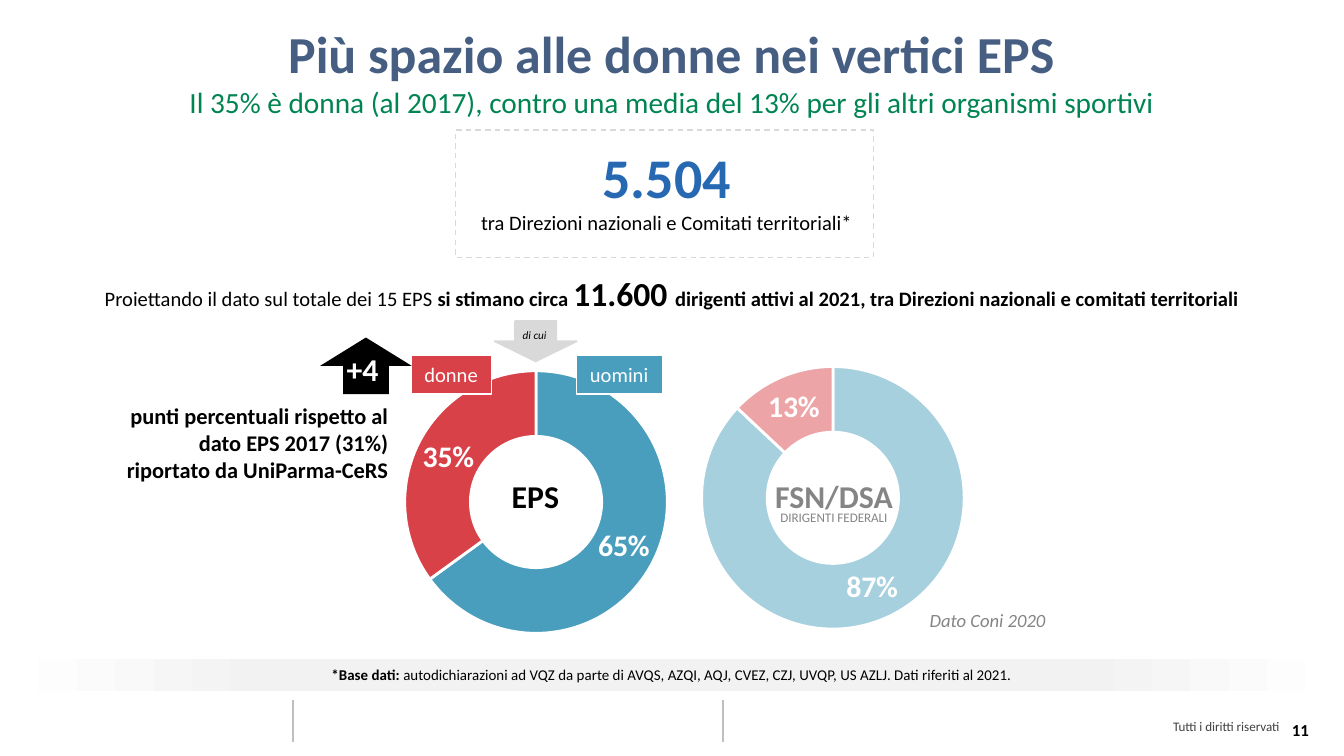
import pptx
import pptx.chart.data
import pptx.dml.color
import pptx.enum.chart
import pptx.enum.dml
import pptx.enum.shapes
import pptx.enum.text
import pptx.oxml
import pptx.oxml.ns
import pptx.util

Cm, Pt = pptx.util.Cm, pptx.util.Pt
SHAPE = pptx.enum.shapes.MSO_SHAPE
ALIGN = pptx.enum.text.PP_ALIGN
ANCHOR = pptx.enum.text.MSO_ANCHOR
AUTO = pptx.enum.text.MSO_AUTO_SIZE
FONT = "Calibri"
COLORS = {
    "black": "000000", "white": "FFFFFF", "dark": "404040", "gray": "D9D9D9",
    "rule": "BFBFBF", "pale": "F2F2F2", "navy": "465E82", "green": "008452",
    "blue": "2668B2", "men": "499EBD", "women": "D94149",
}
NS = pptx.oxml.ns.nsdecls("a")


def rgb(name):
    return pptx.dml.color.RGBColor.from_string(COLORS[name])


def style(font, size, color="black", bold=False, italic=False):
    font.name, font.size = FONT, Pt(size)
    font.bold, font.italic = bold, italic
    font.color.rgb = rgb(color)


def write(shape, *paras, align=ALIGN.LEFT, wrap=True, grow=True,
          anchor=None, pad=(0.25, 0.13), **base):
    """Each paragraph is a string or a list of (text, format) runs."""
    frame = shape.text_frame
    frame.word_wrap = wrap
    frame.auto_size = AUTO.SHAPE_TO_FIT_TEXT if grow else AUTO.NONE
    frame.margin_left = frame.margin_right = Cm(pad[0])
    frame.margin_top = frame.margin_bottom = Cm(pad[1])
    if anchor is not None:
        frame.vertical_anchor = anchor
    for i, runs in enumerate(paras):
        para = frame.add_paragraph() if i else frame.paragraphs[0]
        para.alignment = align
        if isinstance(runs, str):
            runs = [(runs, {})]
        for words, extra in runs:
            run = para.add_run()
            run.text = words
            style(run.font, **{**base, **extra})


def label(slide, spot, *paras, **fmt):
    box = slide.shapes.add_textbox(*map(Cm, spot))
    write(box, *paras, **fmt)


def block(slide, kind, spot, fill=None, line=None, width=0.75):
    shape = slide.shapes.add_shape(kind, *map(Cm, spot))
    shape.shadow.inherit = False
    if fill:
        shape.fill.solid()
        shape.fill.fore_color.rgb = rgb(fill)
    else:
        shape.fill.background()
    if line:
        shape.line.color.rgb = rgb(line)
        shape.line.width = Pt(width)
    else:
        shape.line.fill.background()
    return shape


def rule(slide, x, top, end):
    line = slide.shapes.add_connector(
        pptx.enum.shapes.MSO_CONNECTOR.STRAIGHT, Cm(x), Cm(top), Cm(x), Cm(end))
    line.line.color.rgb = rgb("rule")
    line.line.width = Pt(1)
    line._element.spPr.append(pptx.oxml.parse_xml(f"<a:effectLst {NS}/>"))


def fade(shape, stops):
    """Fill a shape with a left-to-right gradient."""
    marks = "".join(
        f'<a:gs pos="{pos * 1000}"><a:srgbClr val="{COLORS[name]}"/></a:gs>'
        for pos, name in stops)
    grad = pptx.oxml.parse_xml(
        f'<a:gradFill {NS} rotWithShape="1"><a:gsLst>{marks}</a:gsLst>'
        '<a:lin ang="0" scaled="0"/></a:gradFill>')
    props = shape._element.spPr
    props.replace(props.find(pptx.oxml.ns.qn("a:noFill")), grad)


def ring(slide, left, top, men, women):
    data = pptx.chart.data.CategoryChartData(number_format="0%")
    data.categories = ["1", "2"]
    data.add_series("Series 1", (men, women))
    chart = slide.shapes.add_chart(
        pptx.enum.chart.XL_CHART_TYPE.DOUGHNUT,
        Cm(left), Cm(top), Cm(8.71), Cm(5.31), data).chart
    chart.has_legend = chart.has_title = False
    style(chart.font, 10)
    plot = chart.plots[0]
    plot.vary_by_categories = True
    for i, name in enumerate(("men", "women")):
        part = plot.series[0].points[i].format
        part.fill.solid()
        part.fill.fore_color.rgb = rgb(name)
        part.line.color.rgb = rgb("white")
        part.line.width = Pt(1.5)
    tags = plot.series[0].data_labels
    tags.show_value = True
    tags.show_percentage = False
    tags.number_format, tags.number_format_is_linked = "0%", False
    style(tags.font, 16, "white", bold=True)
    # Hole size and plot area
    qn = pptx.oxml.ns.qn
    area = chart._chartSpace.chart.plotArea
    area.find(".//" + qn("c:holeSize")).set("val", "60")
    for old in area.findall(qn("c:layout")):
        area.remove(old)
    sides = "".join(f'<c:{key} val="{val}"/>' for key, val in (
        ("layoutTarget", "inner"), ("xMode", "edge"), ("yMode", "edge"),
        ("x", 0.21), ("y", 0.02), ("w", 0.57), ("h", 0.97)))
    area.insert(0, pptx.oxml.parse_xml(
        f'<c:layout {pptx.oxml.ns.nsdecls("c")}><c:manualLayout>{sides}'
        '</c:manualLayout></c:layout>'))


def main():
    deck = pptx.Presentation()
    deck.slide_width, deck.slide_height = Cm(25.4), Cm(14.29)
    slide = deck.slides.add_slide(deck.slide_layouts[6])
    mid, right = ALIGN.CENTER, ALIGN.RIGHT

    # Footer
    label(slide, (19.53, 13.49, 4.83, 0.48), "Tutti i diritti riservati",
          size=7, color="dark", align=right, pad=(0.18, 0.1))
    for x in (5.54, 13.67):
        rule(slide, x, 13.23, 14.02)
    label(slide, (23.67, 13.41, 1.32, 0.76), "11", size=9, bold=True,
          align=right, grow=False, anchor=ANCHOR.MIDDLE)

    # Other sports bodies, dimmed by a veil
    label(slide, (14.4, 8.89, 2.74, 0.99), "FSN/DSA", size=17, bold=True, wrap=False)
    label(slide, (14.5, 9.5, 2.54, 0.56), "DIRIGENTI FEDERALI", size=7, wrap=False)
    label(slide, (17.32, 11.38, 2.84, 0.69), "Dato Coni 2020", size=10,
          italic=True, wrap=False)
    ring(slide, 11.43, 6.73, 0.87, 0.13)
    veil = block(slide, SHAPE.RECTANGLE, (12.95, 6.53, 7.19, 5.54), "white", "white", 1)
    tint = veil._element.spPr.find(".//" + pptx.oxml.ns.qn("a:srgbClr"))
    tint.append(pptx.oxml.parse_xml(f'<a:alpha {NS} val="52000"/>'))

    # Title
    label(slide, (0, 0.28, 25.4, 2.08),
          "Più spazio alle donne nei vertici EPS",
          [("Il 35% è donna (al 2017), contro una media del 13% per gli altri "
            "organismi sportivi", dict(size=15.7, color="green", bold=False))],
          size=27.8, color="navy", bold=True, align=mid, grow=False)

    # Source strip
    strip = block(slide, SHAPE.RECTANGLE, (0, 12.45, 25.4, 0.61))
    fade(strip, ((0, "white"), (20, "pale"), (80, "pale"), (100, "white")))
    write(strip, [("*Base dati: ", dict(bold=True)),
                  ("autodichiarazioni ad VQZ da parte di AVQS, AZQI, AQJ, CVEZ, CZJ, "
                   "UVQP, US AZLJ. Dati riferiti al 2021.", {})],
          size=8, align=mid)

    # Estimate
    label(slide, (0, 5.03, 25.4, 1.02),
          [("Proiettando il dato sul totale dei 15 EPS ", dict(bold=False)),
           ("si stimano circa ", {}), ("11.600 ", dict(size=18)),
           ("dirigenti attivi al 2021, tra Direzioni nazionali e comitati "
            "territoriali", {})],
          size=11, bold=True, align=mid)
    block(slide, SHAPE.DOWN_ARROW, (9.35, 6.07, 1.55, 0.76), "gray", "gray", 1)

    # EPS ring with its key
    ring(slide, 5.82, 6.81, 0.65, 0.35)
    label(slide, (9.42, 8.89, 1.42, 0.99), "EPS", size=17, bold=True, wrap=False)
    for word, name, left, width in (("donne", "women", 7.77, 1.52),
                                    ("uomini", "men", 10.9, 1.63)):
        key = block(slide, SHAPE.RECTANGLE, (left, 6.71, width, 0.74), name, "white")
        write(key, word, size=11, color="white", wrap=False)

    # Growth since 2017
    rise = block(slide, SHAPE.DOWN_ARROW, (6.05, 6.38, 1.73, 1.07), "black")
    rise.rotation = 180
    label(slide, (6.3, 6.48, 1.24, 0.99), "+4", size=17, color="white", bold=True)
    label(slide, (1.93, 7.47, 5.66, 1.8),
          "punti percentuali rispetto al dato EPS 2017 (31%) riportato da UniParma-CeRS",
          size=12, bold=True, align=right)

    # Headline figure
    label(slide, (7.34, 2.57, 10.52, 2.01), "5.504",
          [("tra Direzioni nazionali e Comitati territoriali*",
            dict(size=11, color="black", bold=False))],
          size=30, color="blue", bold=True, align=mid)
    frame = block(slide, SHAPE.RECTANGLE, (8.61, 2.46, 7.9, 2.41), None, "gray")
    frame.line.dash_style = pptx.enum.dml.MSO_LINE.DASH
    label(slide, (9.63, 6.07, 0.97, 0.51), "di cui", size=6, italic=True, wrap=False)

    deck.save("out.pptx")


if __name__ == "__main__":
    main()
